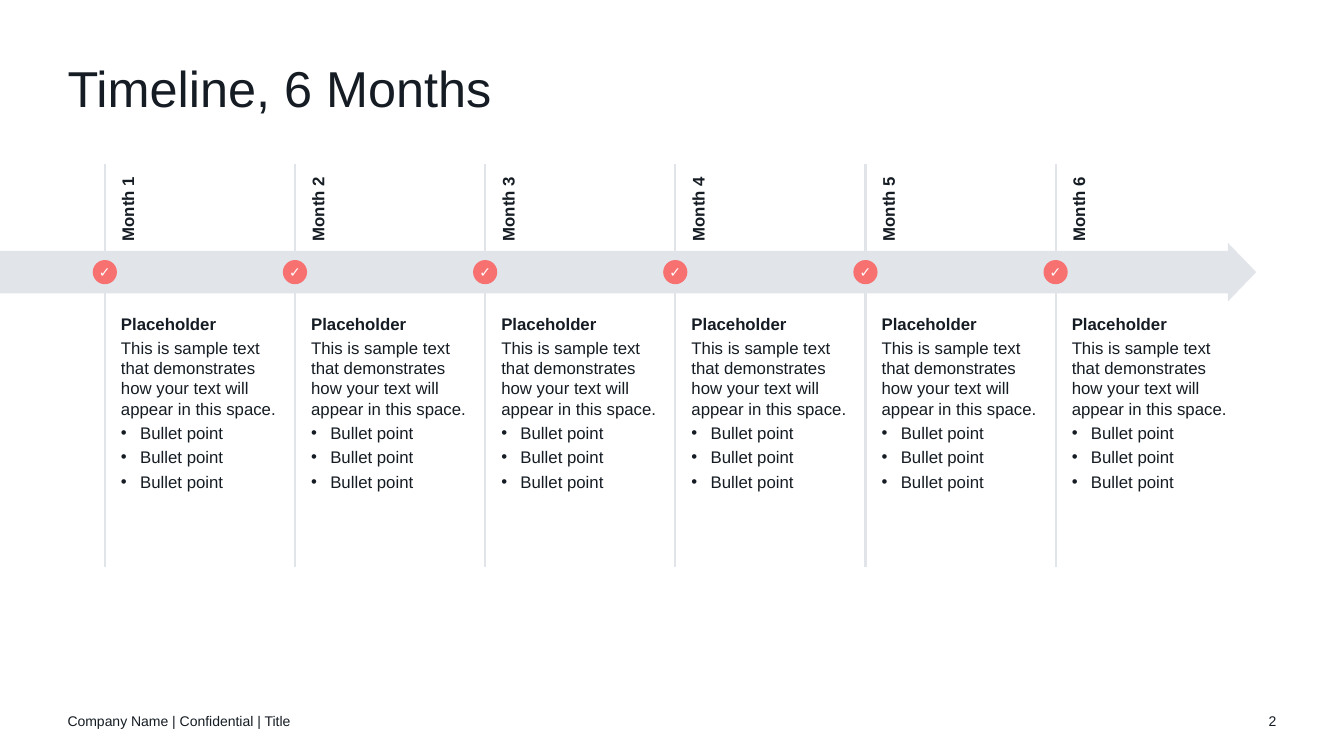
from lxml import etree
from pptx import Presentation, util as u
from pptx.dml.color import RGBColor
from pptx.enum import shapes, text
from pptx.oxml.ns import qn

TITLE = "Timeline, 6 Months"
FOOTER = "Company Name | Confidential | Title"
PAGE_NUMBER = "2"
MONTHS = ["Month 1", "Month 2", "Month 3", "Month 4", "Month 5", "Month 6"]
HEADING = "Placeholder"
SAMPLE = "This is sample text that demonstrates how your text will appear in this space."
BULLETS = ["Bullet point"] * 3

INK, GREY, CORAL, WHITE = "151C23", "E1E4E9", "F87171", "FFFFFF"
WIDTH, HEIGHT = 13.33, 7.5
MARGIN = 0.67
FIRST, STEP = 1.04, 1.886
LINE_TOP, LINE_BOTTOM = 1.63, 5.63
AXIS, BAND, HEAD, HEAD_LENGTH, TIP = 2.7, 0.42, 0.58, 0.28, 12.46
DOT = 0.24
INDENT = 0.19


def color(value):
    return RGBColor.from_string(value)


def inches(*lengths):
    return [u.Inches(length) for length in lengths]


def write(frame, lines, anchor="TOP", align="LEFT", **paragraph):
    layout = {"margin_left": 0, "margin_top": 0, "margin_right": 0, "margin_bottom": 0,
              "word_wrap": True, "auto_size": text.MSO_AUTO_SIZE.NONE,
              "vertical_anchor": text.MSO_ANCHOR[anchor]}
    for name, value in layout.items():
        setattr(frame, name, value)
    for index, (words, size, bold, ink) in enumerate(lines):
        para = frame.add_paragraph() if index else frame.paragraphs[0]
        for name, value in {"alignment": text.PP_ALIGN[align], **paragraph}.items():
            setattr(para, name, value)
        span = para.add_run()
        span.text = words
        for name, value in {"size": u.Pt(size), "bold": bold, "name": "Arial"}.items():
            setattr(span.font, name, value)
        span.font.color.rgb = color(ink)


def add_text(page, place, lines, **options):
    box = page.shapes.add_textbox(*inches(*place))
    write(box.text_frame, lines, **options)
    return box


def paint(shape, fill):
    shape.shadow.inherit = False
    shape.fill.solid()
    shape.fill.fore_color.rgb = color(fill)
    shape.line.fill.background()


def add_bullet(para):
    properties = para._p.get_or_add_pPr()
    properties.set("marL", str(u.Inches(INDENT)))
    properties.set("indent", str(-u.Inches(INDENT)))
    etree.SubElement(properties, qn("a:buFont")).set("typeface", "Arial")
    etree.SubElement(properties, qn("a:buChar")).set("char", "•")


def add_arrow(page):
    neck = TIP - HEAD_LENGTH
    upper = [(0, BAND / 2), (neck, BAND / 2), (neck, HEAD / 2)]
    outline = [(x, AXIS - y) for x, y in upper] + [(TIP, AXIS)]
    outline += [(x, AXIS + y) for x, y in reversed(upper)]
    points = [inches(*point) for point in outline]
    builder = page.shapes.build_freeform(*points[0])
    builder.add_line_segments(points[1:], close=True)
    paint(builder.convert_to_shape(), GREY)


def add_month(page, month, x):
    line = page.shapes.add_connector(
        shapes.MSO_CONNECTOR.STRAIGHT, *inches(x, LINE_TOP, x, LINE_BOTTOM))
    line.line.color.rgb = color(GREY)
    line.line.width = u.Pt(1.5)
    etree.SubElement(line._element.spPr, qn("a:effectLst"))

    dot = page.shapes.add_shape(
        shapes.MSO_SHAPE.OVAL, *inches(x - DOT / 2, AXIS - DOT / 2, DOT, DOT))
    paint(dot, CORAL)
    write(dot.text_frame, [("✓", 10, True, WHITE)], anchor="MIDDLE", align="CENTER")

    lines = [(HEADING, 12, True, INK), (SAMPLE, 12, False, INK)]
    lines += [(bullet, 12, False, INK) for bullet in BULLETS]
    body = add_text(page, (x + 0.16, 3.11, 1.55, 2.5), lines, space_after=u.Pt(3))
    for para in body.text_frame.paragraphs[-len(BULLETS):]:
        add_bullet(para)

    label = add_text(page, (x - 0.15, 1.92, 0.75, 0.2), [(month, 12, True, INK)], anchor="BOTTOM")
    label.rotation = 270


def main():
    deck = Presentation()
    deck.slide_width, deck.slide_height = inches(WIDTH, HEIGHT)
    page = deck.slides.add_slide(deck.slide_layouts[5])

    title = page.shapes.title
    title.left, title.top, title.width, title.height = inches(MARGIN, 0.6, 12, 0.6)
    write(title.text_frame, [(TITLE, 36, False, INK)], anchor="MIDDLE", line_spacing=0.9)

    add_text(page, (WIDTH - MARGIN - 0.5, 6.95, 0.5, 0.4), [(PAGE_NUMBER, 10, False, INK)],
             anchor="MIDDLE", align="RIGHT")
    add_text(page, (MARGIN, 6.95, 4.5, 0.4), [(FOOTER, 10, False, INK)], anchor="MIDDLE")

    add_arrow(page)
    for column, month in enumerate(MONTHS):
        add_month(page, month, FIRST + column * STEP)
    deck.save("out.pptx")


if __name__ == "__main__":
    main()
